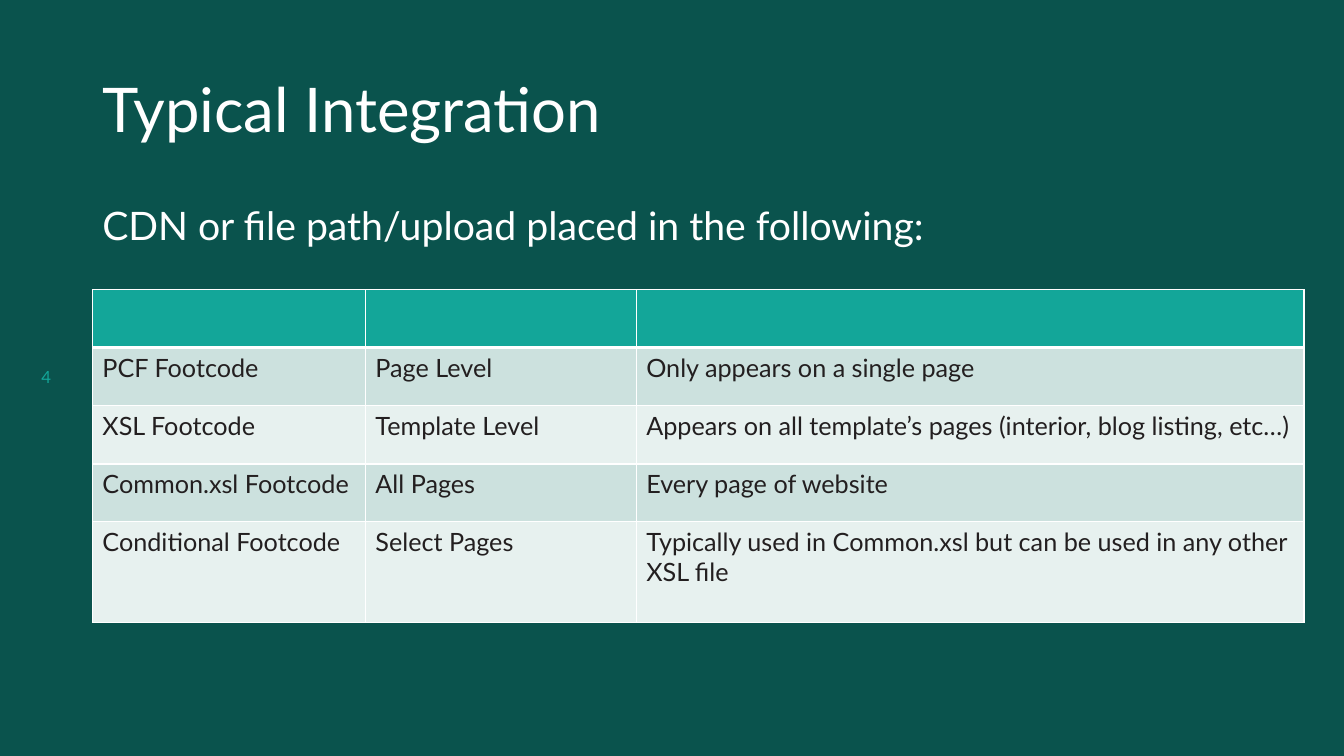
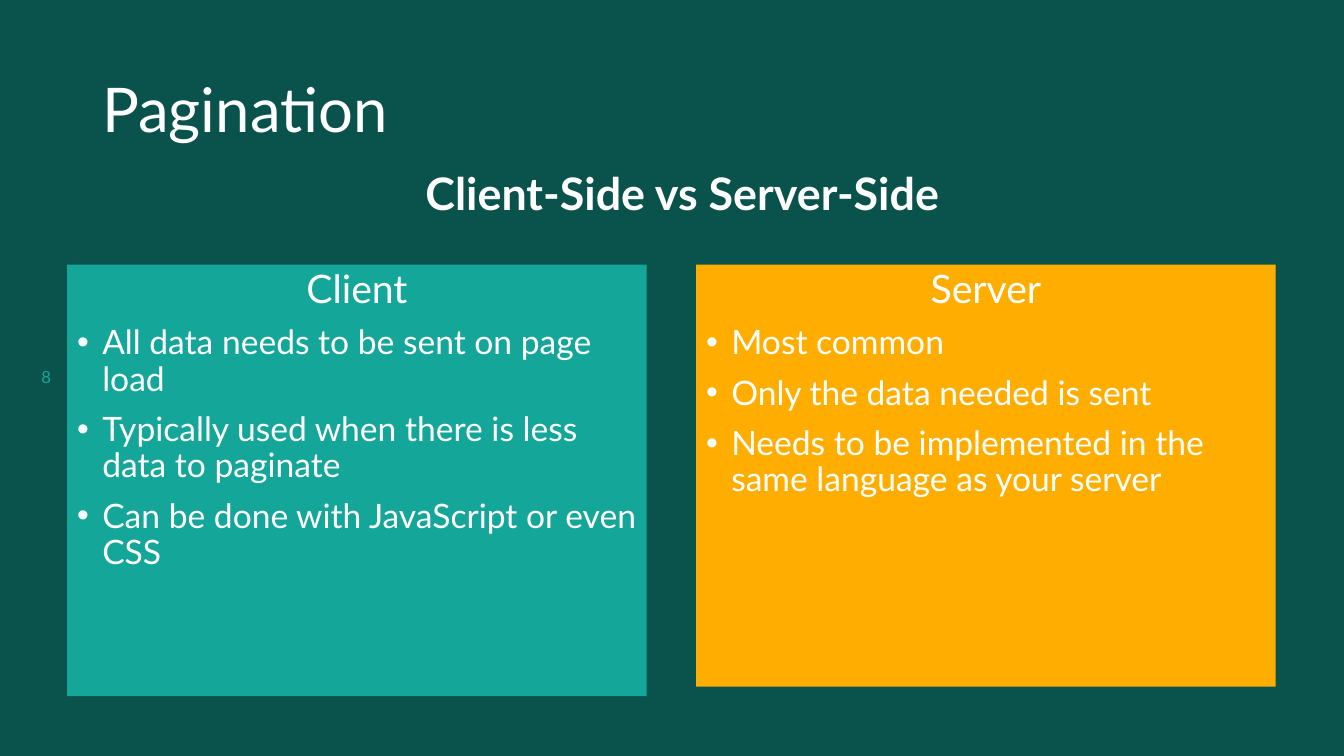
from dataclasses import dataclass

from lxml.etree import SubElement
from pptx import Presentation
from pptx.dml.color import RGBColor
from pptx.enum.shapes import MSO_SHAPE
from pptx.enum.text import MSO_ANCHOR, PP_ALIGN
from pptx.oxml import parse_xml
from pptx.oxml.ns import nsdecls, qn
from pptx.util import Pt


@dataclass(frozen=True)
class Theme:
    """Colours, font and type sizes of the deck."""
    font: str = "Lato"
    back: str = "0A534D"
    teal: str = "13A699"
    amber: str = "FFAE00"
    white: str = "FFFFFF"
    ink: str = "231F20"
    bands: tuple = ("CCE1DE", "E7F1EF")
    title: int = 44
    subtitle: int = 32
    lead: int = 28
    bullet: int = 24
    cell: int = 18
    number: int = 12


T = Theme()


def px(n):
    """Turn pixels (96 to the inch) into EMU."""
    return n * 9525


def paint(fill, colour):
    """Fill with one solid colour."""
    fill.solid()
    fill.fore_color.rgb = RGBColor.from_string(colour)


def write(p, text, size, colour=T.white, bold=False):
    """Add one styled run to a paragraph."""
    r = p.add_run()
    r.text = text
    r.font.name = T.font
    r.font.size = Pt(size)
    r.font.bold = bold
    r.font.color.rgb = RGBColor.from_string(colour)


def add_text(s, box, text, size, colour=T.white, bold=False, align=PP_ALIGN.LEFT,
             anchor=MSO_ANCHOR.TOP, spacing=0.9):
    """Add a wrapped one-paragraph text box."""
    tf = s.shapes.add_textbox(*map(px, box)).text_frame
    tf.word_wrap = True
    tf.vertical_anchor = anchor
    p = tf.paragraphs[0]
    p.alignment = align
    p.line_spacing = spacing
    write(p, text, size, colour, bold)


def add_slide(prs, title, number):
    """Add a slide with the shared background, number and title."""
    s = prs.slides.add_slide(prs.slide_layouts[6])
    paint(s.background.fill, T.back)
    add_text(s, (0, 336, 88, 48), number, T.number, T.teal,
             align=PP_ALIGN.CENTER, anchor=MSO_ANCHOR.MIDDLE)
    add_text(s, (88, 38, 1104, 139), title, T.title, anchor=MSO_ANCHOR.MIDDLE)
    return s


def set_bullet(p):
    """Give a paragraph a hanging round bullet."""
    pPr = p._p.get_or_add_pPr()
    pPr.set("marL", str(px(24)))
    pPr.set("indent", str(px(-24)))
    SubElement(pPr, qn("a:buFont")).set("typeface", "Arial")
    SubElement(pPr, qn("a:buChar")).set("char", "•")


def add_panel(s, box, colour, heading, bullets):
    """Add a filled panel with a centred heading and bullets."""
    sp = s.shapes.add_shape(MSO_SHAPE.RECTANGLE, *map(px, box))
    sp.shadow.inherit = False
    paint(sp.fill, colour)
    sp.line.fill.background()
    tf = sp.text_frame
    tf.word_wrap = True
    tf.vertical_anchor = MSO_ANCHOR.TOP
    p = tf.paragraphs[0]
    p.alignment = PP_ALIGN.CENTER
    p.line_spacing = 0.9
    write(p, heading, T.lead)
    for text in bullets:
        p = tf.add_paragraph()
        set_bullet(p)
        p.alignment = PP_ALIGN.LEFT
        p.line_spacing = 0.9
        p.space_before = Pt(10)
        write(p, text, T.bullet)


def set_borders(cell, top, bottom):
    """Draw white cell borders, one point wide at the sides."""
    tcPr = cell._tc.get_or_add_tcPr()
    for i, (side, width) in enumerate(zip("LRTB", (1, 1, top, bottom))):
        tcPr.insert(i, parse_xml(
            f'<a:ln{side} {nsdecls("a")} w="{Pt(width)}"><a:solidFill>'
            f'<a:srgbClr val="{T.white}"/></a:solidFill></a:ln{side}>'))


def add_grid(s, left, top, widths, heights, rows):
    """Add a banded table below an empty header row."""
    box = (left, top, sum(widths), sum(heights))
    table = s.shapes.add_table(len(heights), len(widths), *map(px, box)).table
    table.horz_banding = False
    for column, width in zip(table.columns, widths):
        column.width = px(width)
    for row, height in zip(table.rows, heights):
        row.height = px(height)
    for cell in table.rows[0].cells:
        paint(cell.fill, T.teal)
        set_borders(cell, 1, 3)
    for i, texts in enumerate(rows, 1):
        for cell, text in zip(table.rows[i].cells, texts):
            paint(cell.fill, T.bands[(i - 1) % 2])
            set_borders(cell, 3 if i == 1 else 1, 1)
            write(cell.text_frame.paragraphs[0], text, T.cell, T.ink)


def build_integration(prs):
    """Build the slide on where the code is placed."""
    s = add_slide(prs, "Typical Integration", "4")
    add_text(s, (88, 192, 1104, 457),
             "CDN or file path/upload placed in the following:", T.lead)
    add_grid(s, 88, 276, (260, 258, 636), (55, 55, 56, 55, 96), (
        ("PCF Footcode", "Page Level", "Only appears on a single page"),
        ("XSL Footcode", "Template Level",
         "Appears on all template’s pages (interior, blog listing, etc…)"),
        ("Common.xsl Footcode", "All Pages", "Every page of website"),
        ("Conditional Footcode", "Select Pages",
         "Typically used in Common.xsl but can be used in any other XSL file"),
    ))


def build_pagination(prs):
    """Build the slide comparing client and server."""
    s = add_slide(prs, "Pagination", "8")
    add_panel(s, (64, 252, 552, 411), T.teal, "Client", (
        "All data needs to be sent on page load",
        "Typically used when there is less data to paginate",
        "Can be done with JavaScript or even CSS",
    ))
    add_panel(s, (663, 252, 552, 402), T.amber, "Server", (
        "Most common",
        "Only the data needed is sent",
        "Needs to be implemented in the same language as your server",
    ))
    add_text(s, (98, 163, 1104, 55), "Client-Side vs Server-Side", T.subtitle,
             bold=True, align=PP_ALIGN.CENTER, spacing=0.8)


def main():
    """Build and save the deck."""
    prs = Presentation()
    prs.slide_width, prs.slide_height = px(1280), px(720)
    build_integration(prs)
    build_pagination(prs)
    prs.save("out.pptx")


if __name__ == "__main__":
    main()
